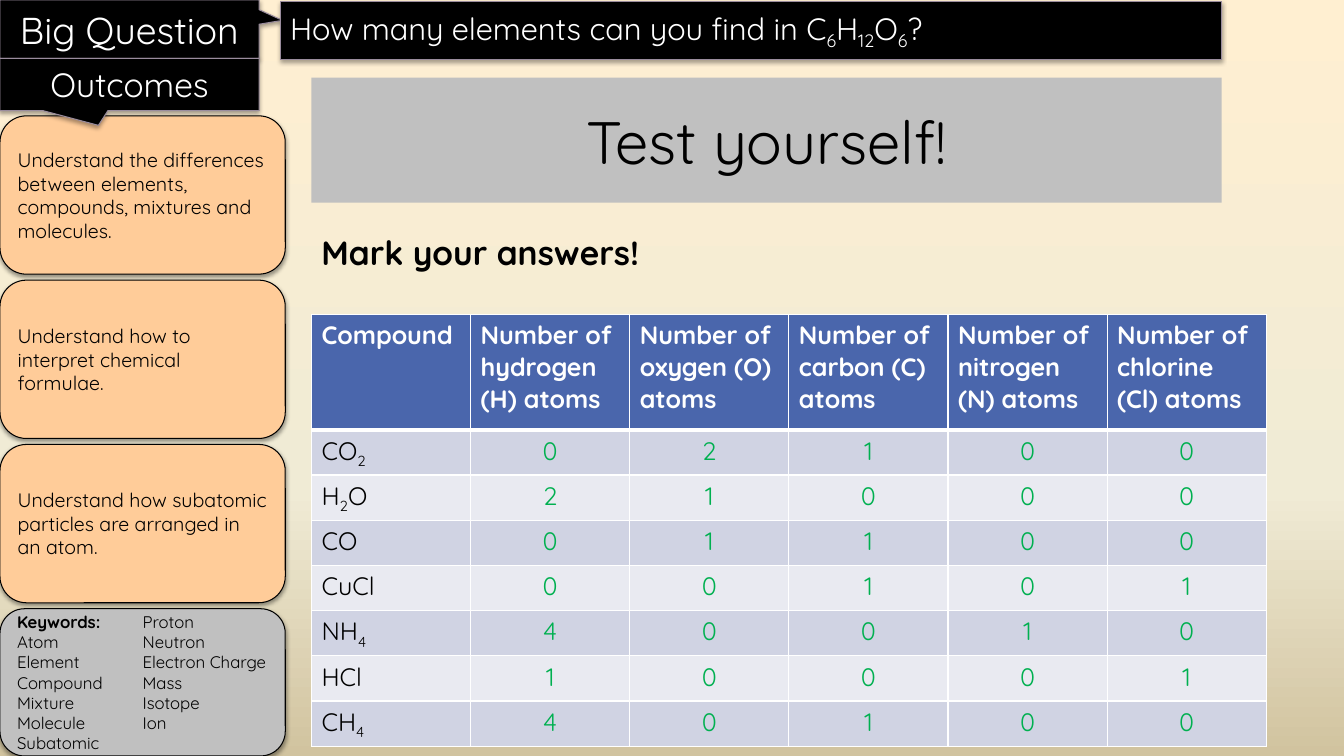
"""Build a chemistry quiz slide with outcome cards and an answer table."""
from copy import deepcopy
from itertools import groupby

from lxml import etree
from pptx import Presentation
from pptx.dml.color import RGBColor
from pptx.enum.shapes import MSO_SHAPE
from pptx.enum.text import MSO_ANCHOR, PP_ALIGN
from pptx.oxml.ns import qn
from pptx.util import Cm, Pt

CALLOUT = MSO_SHAPE.RECTANGULAR_CALLOUT
RECTANGLE = MSO_SHAPE.RECTANGLE
ROUNDED = MSO_SHAPE.ROUNDED_RECTANGLE
MIDDLE = MSO_ANCHOR.MIDDLE
LEFT, CENTER = PP_ALIGN.LEFT, PP_ALIGN.CENTER

FONT = "Quicksand"
COLORS = {
    "black": "000000", "white": "FFFFFF", "mauve": "9A8C9D",
    "peach": "FFCC99", "grey": "C0C0C0", "blue": "4A66AC",
    "dark band": "D0D3E3", "light band": "E9EAF1", "green": "00B050",
}
BACKGROUND = [(0, "FFEFD1"), (0.65, "F0EBD5"), (1, "D1C39F")]
OUTCOMES = [
    "Understand the differences between elements, compounds, mixtures and molecules.",
    "Understand how to interpret chemical formulae.",
    "Understand how subatomic particles are arranged in an atom.",
]
KEYWORDS = [
    "Atom", "Element", "Compound", "Mixture", "Molecule", "Subatomic Proton",
    "Neutron", "Electron Charge", "Mass", "Isotope", "Ion",
]
ELEMENTS = ["hydrogen (H)", "oxygen (O)", "carbon (C)", "nitrogen (N)", "chlorine (Cl)"]
ATOM_COUNTS = {
    "CO2": (0, 2, 1, 0, 0),
    "H2O": (2, 1, 0, 0, 0),
    "CO": (0, 1, 1, 0, 0),
    "CuCl": (0, 0, 1, 0, 1),
    "NH4": (4, 0, 0, 1, 0),
    "HCl": (1, 0, 0, 0, 1),
    "CH4": (4, 0, 1, 0, 0),
}


def rgb(name):
    return RGBColor.from_string(COLORS[name])


def write(paragraph, text, size, color="black", bold=False, align=LEFT, formula=False):
    """Write text in one format; in a formula the digits are subscripts."""
    paragraph.alignment = align
    parts = groupby(text, str.isdigit) if formula else [(False, text)]
    for subscript, characters in parts:
        run = paragraph.add_run()
        run.text = "".join(characters)
        run.font.name = FONT
        run.font.size = Pt(size)
        run.font.bold = bold
        run.font.color.rgb = rgb(color)
        if subscript:
            run.font._element.set("baseline", "-25000")


def add_shadow(shape, opacity):
    effects = shape._element.spPr.find(qn("a:effectLst"))
    shadow = etree.SubElement(
        effects, qn("a:outerShdw"), blurRad=str(Pt(3.1)), dist=str(Pt(1.7)),
        dir="5400000", rotWithShape="0")
    color = etree.SubElement(shadow, qn("a:srgbClr"), val=COLORS["black"])
    etree.SubElement(color, qn("a:alpha"), val=str(opacity * 1000))


def add_panel(slide, kind, box, fill, line=None, opacity=0, adjustments=()):
    """Add a filled shape and return it, its text anchored in the middle."""
    shape = slide.shapes.add_shape(kind, *map(Cm, box))
    shape.shadow.inherit = False
    shape.fill.solid()
    shape.fill.fore_color.rgb = rgb(fill)
    if line:
        shape.line.color.rgb = rgb(line)
        shape.line.width = Pt(0.75)
    else:
        shape.line.fill.background()
    if opacity:
        add_shadow(shape, opacity)
    for index, value in enumerate(adjustments):
        shape.adjustments[index] = value
    shape.text_frame.word_wrap = True
    shape.text_frame.vertical_anchor = MIDDLE
    return shape


def add_banner(slide, kind, box, text, size, adjustments=(), **text_format):
    banner = add_panel(slide, kind, box, "black", "mauve", 35, adjustments)
    write(banner.text_frame.paragraphs[0], text, size, "white", **text_format)


def add_card(slide, top, height, fill):
    return add_panel(slide, ROUNDED, (0, top, 7.19, height), fill, "black", 38)


def add_keywords(slide):
    frame = add_card(slide, 15.34, 3.71, "grey").text_frame
    frame._txBody.bodyPr.set("numCol", "2")
    write(frame.paragraphs[0], "Keywords:", 12, bold=True)
    for keyword in KEYWORDS:
        write(frame.add_paragraph(), keyword, 12)


def format_cell(cell, fill, top=1, bottom=1):
    """Give a cell white borders and a solid fill."""
    properties = cell._tc.get_or_add_tcPr()
    for side, width in {"L": 1, "R": 1, "T": top, "B": bottom}.items():
        border = etree.SubElement(properties, qn(f"a:ln{side}"), w=str(Pt(width)))
        solid = etree.SubElement(border, qn("a:solidFill"))
        etree.SubElement(solid, qn("a:srgbClr"), val=COLORS["white"])
    cell.fill.solid()
    cell.fill.fore_color.rgb = rgb(fill)


def add_answer_table(slide):
    headings = ["Compound"] + [f"Number of {element} atoms" for element in ELEMENTS]
    row_count, column_count = len(ATOM_COUNTS) + 1, len(headings)
    table = slide.shapes.add_table(
        row_count, column_count, Cm(7.85), Cm(7.93), Cm(24.08), Cm(10.88)).table
    table.first_row = table.horz_banding = False
    for column in table.columns:
        column.width = Cm(4.01)
    for index, row in enumerate(table.rows):
        row.height = Cm(1.14 if index else 2.9)
    for column, heading in enumerate(headings):
        cell = table.cell(0, column)
        format_cell(cell, "blue", bottom=3)
        write(cell.text_frame.paragraphs[0], heading, 18, "white", bold=True)
    for row, (compound, counts) in enumerate(ATOM_COUNTS.items(), 1):
        for column, value in enumerate((compound, *counts)):
            cell = table.cell(row, column)
            format_cell(cell, "dark band" if row % 2 else "light band",
                        top=3 if row == 1 else 1)
            paragraph = cell.text_frame.paragraphs[0]
            if column:
                write(paragraph, str(value), 18, "green", align=CENTER)
            else:
                write(paragraph, value, 18, formula=True)


def set_background(slide):
    fill = slide.background.fill
    fill.gradient()
    fill.gradient_angle = 270
    stop_list = next(slide.element.iter(qn("a:gsLst")))
    stop_list.append(deepcopy(stop_list[-1]))
    for stop, (position, color) in zip(fill.gradient_stops, BACKGROUND):
        stop.position = position
        stop.color.rgb = RGBColor.from_string(color)


def main():
    presentation = Presentation()
    presentation.slide_width, presentation.slide_height = Cm(33.87), Cm(19.05)
    slide = presentation.slides.add_slide(presentation.slide_layouts[6])
    set_background(slide)

    add_banner(slide, CALLOUT, (0, 0, 6.53, 1.47), "Big Question", 26.7,
               (0.59, -0.15), align=CENTER)
    add_banner(slide, RECTANGLE, (7.06, 0.03, 23.72, 1.47),
               "How many elements can you find in C6H12O6?", 22, formula=True)
    for index, outcome in enumerate(OUTCOMES):
        card = add_card(slide, 2.92 + 4.14 * index, 3.99, "peach")
        write(card.text_frame.paragraphs[0], outcome, 14)
    add_keywords(slide)
    add_banner(slide, CALLOUT, (0, 1.47, 6.53, 1.32), "Outcomes", 24,
               (-0.12, 0.78), align=CENTER)

    prompt = slide.shapes.add_textbox(Cm(7.85), Cm(5.72), Cm(24.08), Cm(12.52))
    prompt.text_frame.word_wrap = True
    write(prompt.text_frame.paragraphs[0], "Mark your answers!", 24, bold=True)
    title = add_panel(slide, RECTANGLE, (7.85, 1.96, 22.94, 3.15), "grey")
    write(title.text_frame.paragraphs[0], "Test yourself!", 42.7, align=CENTER)
    add_answer_table(slide)
    presentation.save("out.pptx")


if __name__ == "__main__":
    main()
